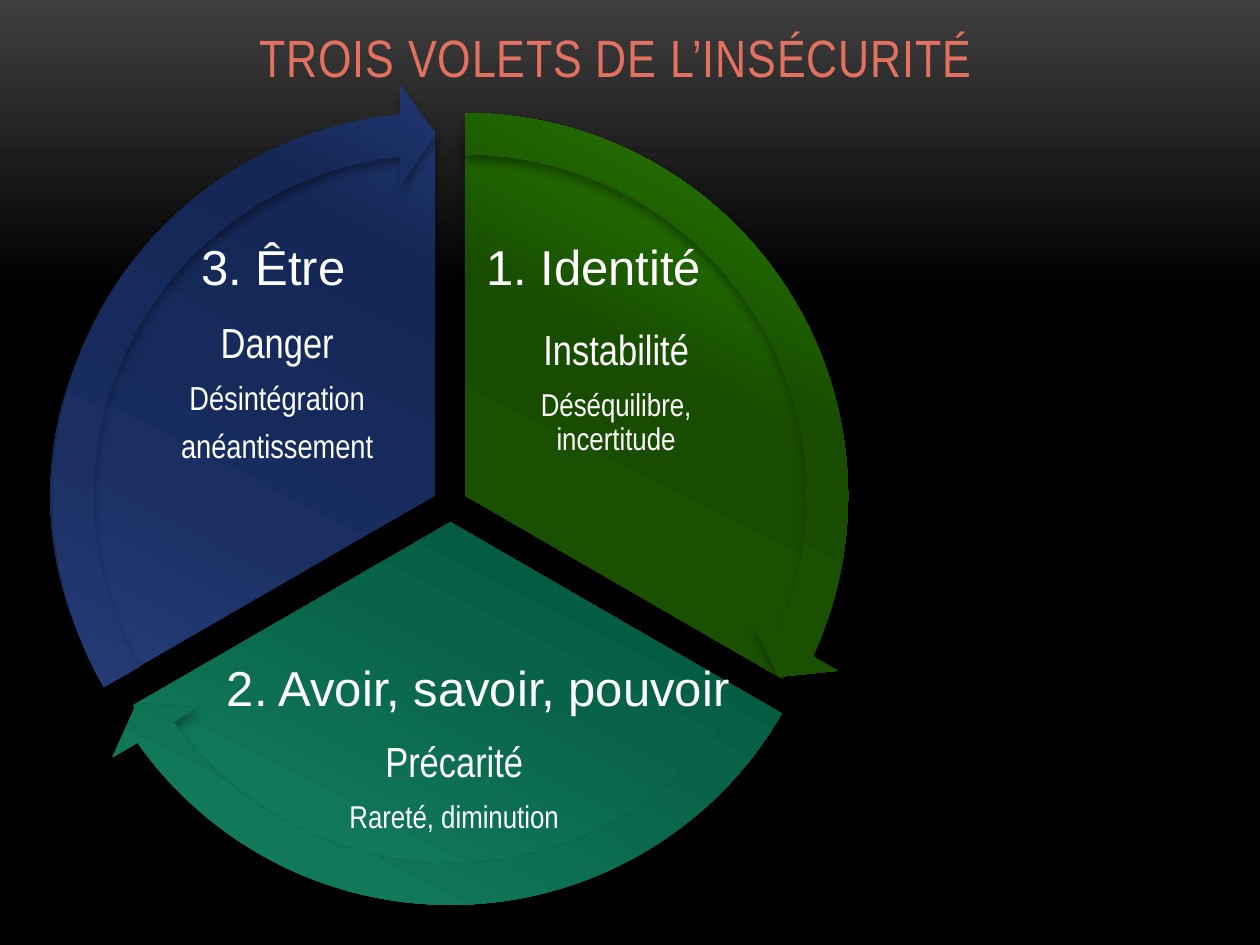
from dataclasses import dataclass

from pptx import Presentation
from pptx.dml.color import RGBColor
from pptx.enum.shapes import MSO_SHAPE as Shape
from pptx.enum.text import MSO_ANCHOR as Anchor, MSO_AUTO_SIZE as AutoSize, PP_ALIGN as Align
from pptx.oxml.ns import qn
from pptx.util import Inches, Pt

STOP_POSITIONS = (0, 30, 50, 60, 100)
ADJUSTMENT_PER_DEGREE = 0.6
ARROW_THICKNESS, ARROW_HEAD_ANGLE, ARROW_HEAD_SIZE = 0.05, 3.28, 0.06


def stops(*colors):
    return list(zip(STOP_POSITIONS, colors))


@dataclass(frozen=True)
class Theme:
    background: tuple = ((0, "3F3F3F"), (31, "000000"), (100, "000000"))
    title_color: str = "E47160"
    text_color: str = "FFFFFF"
    narrow_font: str = "Arial Narrow"
    label_font: str = "Arial"
    title_size: int = 30
    label_size: int = 28
    heading_size: int = 24
    gradient_angle: int = 117


@dataclass(frozen=True)
class Sector:
    start: int  # degrees, clockwise from three o'clock
    end: int
    pie_box: tuple
    arrow_box: tuple
    gradient: list
    text_box: tuple
    anchor: Anchor
    heading: str
    details: tuple
    detail_size: int


SECTORS = [
    Sector(270, 30, (0.79, 1.03, 5.81, 5.81), (0.43, 0.67, 6.53, 6.53),
           stops("2C8903", "184C00", "195100", "1C5A00", "2A8103"),
           (3.85, 2.26, 2.08, 1.73), Anchor.MIDDLE,
           "Instabilité", ("Déséquilibre, incertitude",), 18),
    Sector(30, 150, (0.67, 1.24, 5.81, 5.81), (0.31, 0.88, 6.53, 6.53),
           stops("17916C", "04573F", "045D43", "096348", "168866"),
           (2.05, 5.01, 3.11, 1.65), Anchor.BOTTOM,
           "Précarité", ("Rareté, diminution",), 18),
    Sector(150, 270, (0.4, 1.03, 6.09, 5.81), (0.19, 0.67, 6.53, 6.53),
           stops("314D92", "142756", "162A5C", "1B2F62", "2F4889"),
           (1.11, 2.26, 2.18, 1.73), Anchor.MIDDLE,
           "Danger", ("Désintégration", "anéantissement"), 19),
]

# Text, box, wrapping and alignment of the sector labels
LABELS = [
    ("1. Identité", (3.76, 1.83, 1.93, 0.57), False, Align.LEFT),
    ("3. Être", (1.5, 1.83, 1.36, 0.57), False, Align.LEFT),
    ("2. Avoir, savoir, pouvoir", (1.38, 5.17, 4.83, 0.57), True, Align.CENTER),
]


def add_child(parent, tag, **attributes):
    child = parent.makeelement(qn(tag), {})
    for name, value in attributes.items():
        child.set(name, str(value))
    parent.append(child)
    return child


def write_text(paragraph, text, *, size, font, color, align=Align.CENTER,
               line_spacing=None, space_after=None):
    paragraph.alignment = align
    paragraph.line_spacing = line_spacing
    paragraph.space_after = space_after
    run = paragraph.add_run()
    run.text = text
    run.font.size = Pt(size)
    run.font.name = font
    run.font.color.rgb = RGBColor.from_string(color)
    return run


def apply_gradient(fill, element, gradient, angle):
    fill.gradient()
    fill.gradient_angle = 360 - angle
    stop_list = element.find(".//" + qn("a:gsLst"))
    for stop in list(stop_list):
        stop_list.remove(stop)
    for position, color in gradient:
        stop = add_child(stop_list, "a:gs", pos=position * 1000)
        add_child(stop, "a:srgbClr", val=color)


class SlideBuilder:
    def __init__(self, slide, theme):
        self.slide = slide
        self.theme = theme

    def background(self):
        apply_gradient(self.slide.background.fill, self.slide.element,
                       self.theme.background, 90)

    def title(self, text, box):
        title = self.slide.shapes.title
        title.left, title.top, title.width, title.height = map(Inches, box)
        frame = title.text_frame
        frame.vertical_anchor = Anchor.BOTTOM
        frame.auto_size = AutoSize.NONE
        paragraph = frame.paragraphs[0]
        run = write_text(paragraph, text, size=self.theme.title_size,
                         font=self.theme.narrow_font, color=self.theme.title_color)
        # Left indent and letter spacing
        properties = paragraph._p.get_or_add_pPr()
        properties.set("marL", str(Inches(0.53)))
        properties.set("indent", "0")
        run.font._element.set("spc", "50")

    def shaded_shape(self, kind, box, adjustments, gradient):
        shape = self.slide.shapes.add_shape(kind, *map(Inches, box))
        for index, value in enumerate(adjustments):
            shape.adjustments[index] = value
        apply_gradient(shape.fill, shape.element, gradient, self.theme.gradient_angle)
        shape.line.fill.background()
        # Soft shadow straight below
        shape.shadow.inherit = False
        effects = shape.element.spPr.find(qn("a:effectLst"))
        shadow = add_child(effects, "a:outerShdw", blurRad=Pt(5), dist=Pt(4),
                           dir=90 * 60000, rotWithShape=0)
        color = add_child(shadow, "a:srgbClr", val="000000")
        add_child(color, "a:alpha", val=35000)

    def pie(self, sector):
        angles = [angle * ADJUSTMENT_PER_DEGREE for angle in (sector.start, sector.end)]
        self.shaded_shape(Shape.PIE, sector.pie_box, angles, sector.gradient)

    def arrow(self, sector):
        start, end = (angle * ADJUSTMENT_PER_DEGREE for angle in (sector.start, sector.end))
        adjustments = (ARROW_THICKNESS, ARROW_HEAD_ANGLE, end - ARROW_HEAD_ANGLE,
                       start, ARROW_HEAD_SIZE)
        self.shaded_shape(Shape.CIRCULAR_ARROW, sector.arrow_box, adjustments,
                          sector.gradient)

    def sector_text(self, sector):
        frame = self.slide.shapes.add_textbox(*map(Inches, sector.text_box)).text_frame
        frame.word_wrap = True
        frame.vertical_anchor = sector.anchor
        frame.margin_left = frame.margin_right = Inches(0.03)
        frame.margin_top = frame.margin_bottom = Inches(0.03)
        lines = [(sector.heading, self.theme.heading_size)]
        lines += [(detail, sector.detail_size) for detail in sector.details]
        for index, (text, size) in enumerate(lines):
            paragraph = frame.add_paragraph() if index else frame.paragraphs[0]
            write_text(paragraph, text, size=size, font=self.theme.narrow_font,
                       color=self.theme.text_color, line_spacing=0.9,
                       space_after=Pt(0.35 * size))

    def label(self, text, box, wrap, align):
        frame = self.slide.shapes.add_textbox(*map(Inches, box)).text_frame
        frame.word_wrap = wrap
        frame.auto_size = AutoSize.SHAPE_TO_FIT_TEXT
        write_text(frame.paragraphs[0], text, size=self.theme.label_size,
                   font=self.theme.label_font, color=self.theme.text_color, align=align)


def main():
    presentation = Presentation()
    presentation.slide_width, presentation.slide_height = Inches(10), Inches(7.5)
    slide = presentation.slides.add_slide(presentation.slide_layouts[5])
    builder = SlideBuilder(slide, Theme())

    builder.background()
    builder.title("TROIS VOLETS DE L’INSÉCURITÉ", (0, 0, 9.25, 0.75))
    # Sectors with their texts, then the arrows around them
    for sector in SECTORS:
        builder.pie(sector)
        builder.sector_text(sector)
    for sector in SECTORS:
        builder.arrow(sector)
    # Large labels on top
    for label in LABELS:
        builder.label(*label)

    presentation.save("out.pptx")


if __name__ == "__main__":
    main()
